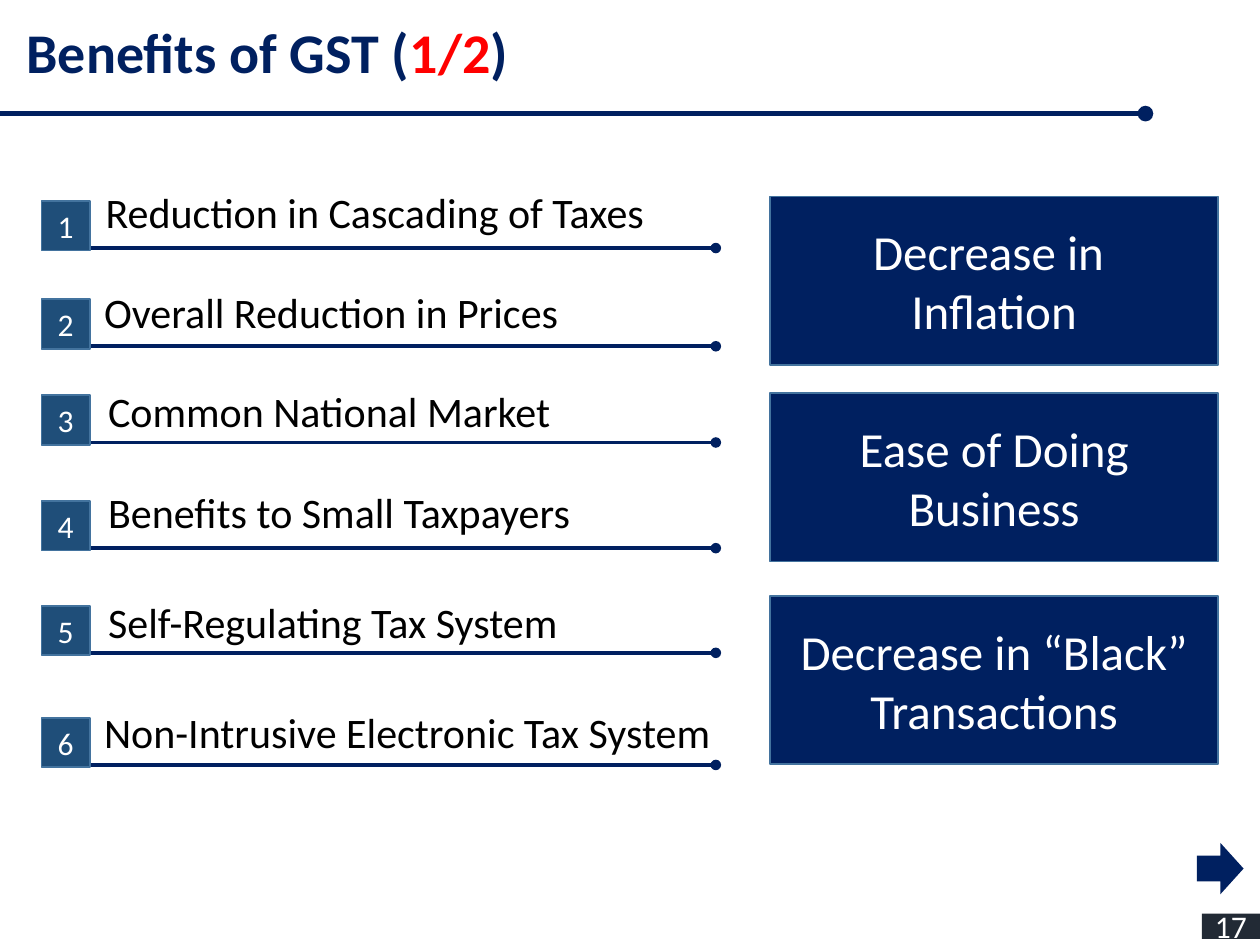
from lxml import etree
from pptx import Presentation
from pptx import util as u
from pptx.dml.color import RGBColor
from pptx.enum import shapes, text
from pptx.oxml.ns import qn

NAVY, BLUE, EDGE, DARK = "002060", "1F4E79", "43739E", "222A35"
WHITE, BLACK, RED = "FFFFFF", "000000", "FF0000"

# line height, text left, text top, text width, wording
ROWS = [
    (5.0, 1.88, 3.63, 23.47, "Reduction in Cascading of Taxes"),
    (6.98, 1.85, 5.66, 21.26, "Overall Reduction in Prices"),
    (8.92, 1.93, 7.65, 21.26, "Common National Market"),
    (11.05, 1.93, 9.68, 21.26, "Benefits to Small Taxpayers"),
    (13.16, 1.93, 11.91, 21.26, "Self-Regulating Tax System"),
    (15.42, 1.85, 14.12, 21.26, "Non-Intrusive Electronic Tax System"),
]
PANELS = [
    (3.96, ["Decrease in ", "Inflation"]),
    (7.92, ["Ease of Doing Business"]),
    (12.01, ["Decrease in “Black” Transactions"]),
]


def color(code):
    return RGBColor.from_string(code)


def put(para, words, size=24, ink=BLACK, bold=False, align=text.PP_ALIGN.LEFT):
    """Add one formatted run to a paragraph."""
    para.alignment = align
    run = para.add_run()
    run.text = words
    font = run.font
    font.name, font.size, font.bold = "Calibri", u.Pt(size), bold
    font.color.rgb = color(ink)


def place(x, y, w, h):
    return [u.Cm(n) for n in (x, y, w, h)]


def line(slide, x1, x2, y, width):
    """Draw a level line with a round end."""
    rule = slide.shapes.add_connector(
        shapes.MSO_CONNECTOR.STRAIGHT, *place(x1, y, x2, y))
    rule.line.color.rgb = color(NAVY)
    rule.line.width = u.Pt(width)
    etree.SubElement(rule.line._get_or_add_ln(), qn("a:tailEnd"), type="oval")
    etree.SubElement(rule._element.spPr, qn("a:effectLst"))


def block(slide, box, fill, lines=(), size=18, edge=None,
          kind=shapes.MSO_SHAPE.RECTANGLE):
    """Draw a filled shape with centred white text."""
    shape = slide.shapes.add_shape(kind, *place(*box))
    shape.shadow.inherit = False
    shape.fill.solid()
    shape.fill.fore_color.rgb = color(fill)
    if edge:
        shape.line.color.rgb = color(edge)
        shape.line.width = u.Pt(1)
    else:
        shape.line.fill.background()
    frame = shape.text_frame
    frame.word_wrap = True
    frame.vertical_anchor = text.MSO_ANCHOR.MIDDLE
    for i, words in enumerate(lines):
        para = frame.add_paragraph() if i else frame.paragraphs[0]
        put(para, words, size=size, ink=WHITE, align=text.PP_ALIGN.CENTER)


def label(slide, box, words):
    frame = slide.shapes.add_textbox(*place(*box)).text_frame
    frame.word_wrap = True
    put(frame.paragraphs[0], words)


def head(slide):
    title = slide.shapes.title
    title.left, title.top, title.width, title.height = place(0.28, 0.23, 21.11, 1.63)
    frame = title.text_frame
    frame.word_wrap = True
    frame.auto_size = text.MSO_AUTO_SIZE.NONE
    frame.vertical_anchor = text.MSO_ANCHOR.TOP
    for words, ink in (("Benefits of GST (", NAVY), ("1/2", RED), (")", NAVY)):
        put(frame.paragraphs[0], words, size=32, ink=ink, bold=True)
    line(slide, 0, 23.09, 2.29, 3)


def main():
    deck = Presentation()
    deck.slide_width, deck.slide_height = u.Cm(25.4), u.Cm(19.05)
    slide = deck.slides.add_slide(deck.slide_layouts[5])
    head(slide)

    # Numbered benefits
    for num, (y, left, top, width, words) in enumerate(ROWS, 1):
        line(slide, 1.47, 14.43, y, 2)
        block(slide, (0.84, y - 0.95, 0.97, 1), BLUE, [str(num)], edge=EDGE)
        label(slide, (left, top, width, 1.27), words)

    # Outcome panels
    for top, lines in PANELS:
        block(slide, (15.52, top, 9.04, 3.4), NAVY, lines, size=28, edge=EDGE)

    # Page number and arrow
    block(slide, (24.23, 18.42, 1.17, 0.51), DARK, ["17"])
    block(slide, (24.13, 16.99, 0.94, 1.04), NAVY,
          kind=shapes.MSO_SHAPE.RIGHT_ARROW)
    deck.save("out.pptx")


if __name__ == "__main__":
    main()
